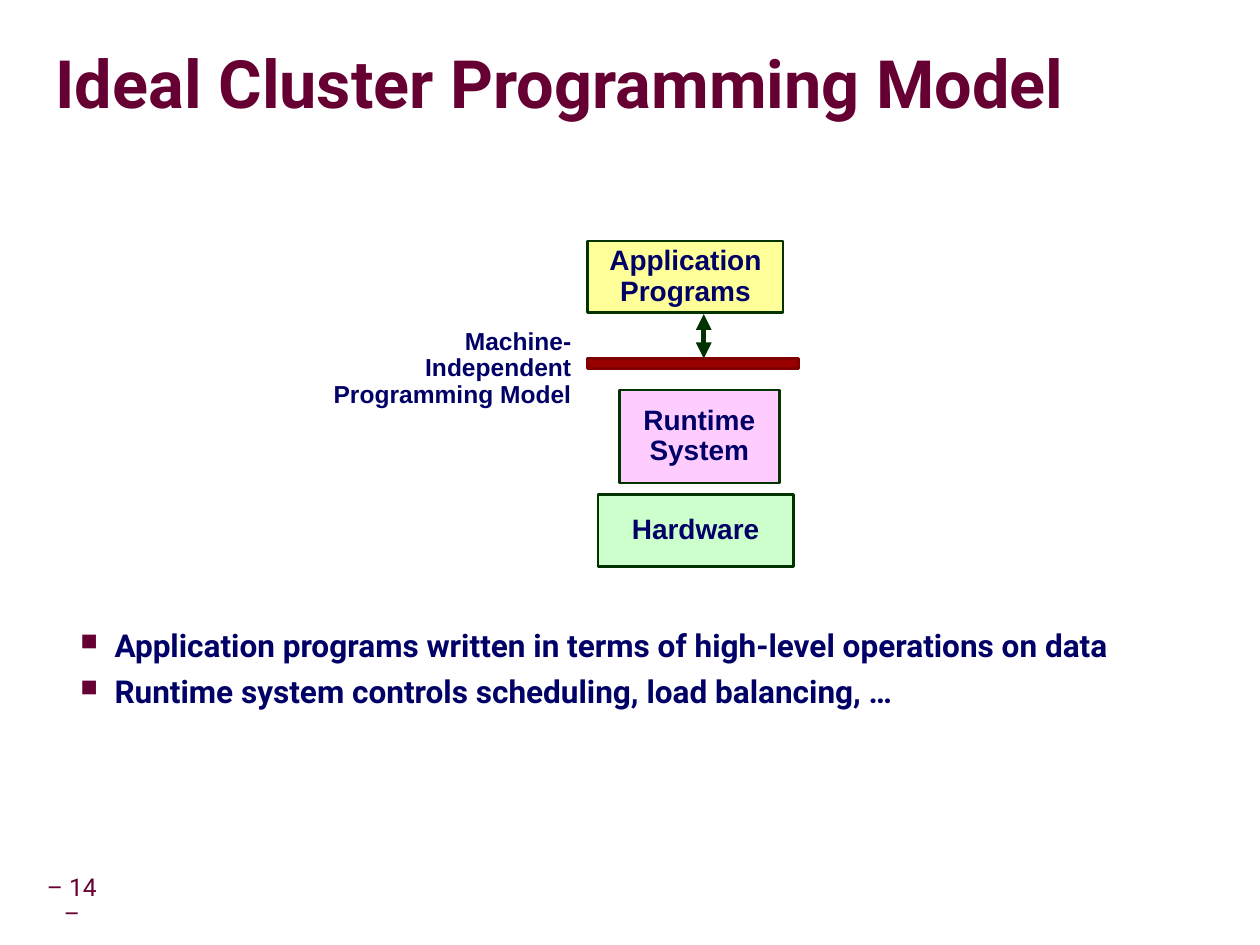
from dataclasses import dataclass

from lxml import etree
from pptx import Presentation
from pptx.dml.color import RGBColor
from pptx.enum.shapes import MSO_CONNECTOR, MSO_SHAPE
from pptx.enum.text import MSO_ANCHOR, MSO_AUTO_SIZE, PP_ALIGN
from pptx.oxml import parse_xml
from pptx.oxml.ns import nsdecls, qn
from pptx.util import Inches, Pt

LEFT, CENTER, RIGHT = PP_ALIGN.LEFT, PP_ALIGN.CENTER, PP_ALIGN.RIGHT
TOP, MIDDLE = MSO_ANCHOR.TOP, MSO_ANCHOR.MIDDLE
RECTANGLE = MSO_SHAPE.RECTANGLE
STRAIGHT = MSO_CONNECTOR.STRAIGHT
NO_AUTOSIZE = MSO_AUTO_SIZE.NONE

MAROON, NAVY, DARK_GREEN = "660033", "000066", "003300"
HEADING_FONT, DIAGRAM_FONT = "Roboto", "Arial"


@dataclass(frozen=True)
class Box:
    left: float
    top: float
    width: float
    height: float

    def lengths(self) -> tuple:
        return tuple(Inches(v) for v in (self.left, self.top, self.width, self.height))


@dataclass(frozen=True)
class Style:
    font: str
    size: float
    color: str
    bold: bool = True
    align: PP_ALIGN = LEFT
    spacing: float = 1.0


@dataclass(frozen=True)
class Layer:
    lines: tuple[str, ...]
    box: Box
    fill: str
    line: str = DARK_GREEN


TITLE_STYLE = Style(HEADING_FONT, 38, MAROON, spacing=0.87)
BULLET_STYLE = Style(HEADING_FONT, 18, NAVY)
NUMBER_STYLE = Style(HEADING_FONT, 14, MAROON, False, CENTER, 0.9)
LAYER_STYLE = Style(DIAGRAM_FONT, 16, NAVY, True, CENTER, 0.9)
LABEL_STYLE = Style(DIAGRAM_FONT, 14, NAVY, True, RIGHT, 0.9)

LAYERS = (
    Layer((), Box(4.66, 2.84, 1.67, 0.08), "990000", "800000"),
    Layer(("Hardware",), Box(4.74, 3.92, 1.55, 0.57), "CCFFCC"),
    Layer(("Runtime", "System"), Box(4.91, 3.09, 1.27, 0.74), "FFCCFF"),
    Layer(("Application", "Programs"), Box(4.66, 1.91, 1.55, 0.57), "FFFF99"),
)
BULLETS = (
    "Application programs written in terms of high-level operations on data",
    "Runtime system controls scheduling, load balancing, …",
)


def rgb(color: str) -> RGBColor:
    return RGBColor.from_string(color)


def write(frame, lines: tuple[str, ...], style: Style, anchor: MSO_ANCHOR,
          inset: float = 0.05, wrap: bool = True) -> None:
    frame.auto_size = NO_AUTOSIZE
    frame.word_wrap = wrap
    frame.vertical_anchor = anchor
    frame.margin_left = frame.margin_right = Inches(inset)
    frame.margin_top = frame.margin_bottom = Inches(min(inset, 0.05))
    for index, text in enumerate(lines):
        paragraph = frame.add_paragraph() if index else frame.paragraphs[0]
        paragraph.alignment = style.align
        paragraph.line_spacing = style.spacing
        run = paragraph.add_run()
        run.text = text
        run.font.name = style.font
        run.font.size = Pt(style.size)
        run.font.bold = style.bold
        run.font.color.rgb = rgb(style.color)


def add_text(slide, box: Box, lines: tuple[str, ...], style: Style,
             anchor: MSO_ANCHOR = TOP, inset: float = 0.05):
    frame = slide.shapes.add_textbox(*box.lengths()).text_frame
    write(frame, lines, style, anchor, inset)
    return frame


def add_title(slide, text: str, box: Box) -> None:
    title = slide.shapes.title
    title.left, title.top, title.width, title.height = box.lengths()
    write(title.text_frame, (text,), TITLE_STYLE, MIDDLE, inset=0)
    properties = title.text_frame.paragraphs[0].runs[0].font.fill._xPr
    shadow = parse_xml(
        f'<a:effectLst {nsdecls("a")}><a:outerShdw dist="35921" dir="2700000">'
        '<a:srgbClr val="969696"/></a:outerShdw></a:effectLst>')
    properties.find(qn("a:solidFill")).addnext(shadow)


def add_layer(slide, layer: Layer) -> None:
    shape = slide.shapes.add_shape(RECTANGLE, *layer.box.lengths())
    shape.shadow.inherit = False
    shape.fill.solid()
    shape.fill.fore_color.rgb = rgb(layer.fill)
    shape.line.color.rgb = rgb(layer.line)
    shape.line.width = Pt(1.5)
    write(shape.text_frame, layer.lines, LAYER_STYLE, MIDDLE, wrap=False)


def add_double_arrow(slide, x: float, top: float, bottom: float) -> None:
    arrow = slide.shapes.add_connector(
        STRAIGHT, Inches(x), Inches(top), Inches(x), Inches(bottom))
    arrow.line.color.rgb = rgb(DARK_GREEN)
    arrow.line.width = Pt(3)
    line = arrow.line._get_or_add_ln()
    for end in ("a:headEnd", "a:tailEnd"):
        etree.SubElement(line, qn(end), type="triangle")
    etree.SubElement(arrow._element.spPr, qn("a:effectLst"))


def add_bullets(slide, box: Box, points: tuple[str, ...]) -> None:
    frame = add_text(slide, box, points, BULLET_STYLE, inset=0.1)
    for index, paragraph in enumerate(frame.paragraphs):
        if index:
            paragraph.space_before = Pt(5)
        properties = paragraph._p.get_or_add_pPr()
        properties.set("marL", str(Inches(0.81)))
        properties.set("indent", str(Inches(-0.27)))
        color = etree.SubElement(properties, qn("a:buClr"))
        etree.SubElement(color, qn("a:srgbClr"), val=MAROON)
        etree.SubElement(properties, qn("a:buSzPct"), val="75000")
        etree.SubElement(properties, qn("a:buChar"), char="■")


def main() -> None:
    deck = Presentation()
    deck.slide_width, deck.slide_height = Inches(9.99), Inches(7.49)
    slide = deck.slides.add_slide(deck.slide_layouts[5])

    # Title and page number
    add_title(slide, "Ideal Cluster Programming Model", Box(0.44, 0.27, 9.52, 0.85))
    add_text(slide, Box(0.24, 6.99, 0.66, 0.31), ("– 14 –",), NUMBER_STYLE, MIDDLE)

    # Layer diagram
    for layer in LAYERS:
        add_layer(slide, layer)
    add_text(slide, Box(2.49, 2.56, 2.09, 0.52),
             ("Machine-Independent", "Programming Model"), LABEL_STYLE)
    add_double_arrow(slide, 5.58, 2.49, 2.84)

    # Key points
    add_bullets(slide, Box(0, 4.91, 9.39, 2.12), BULLETS)

    deck.save("out.pptx")


if __name__ == "__main__":
    main()
